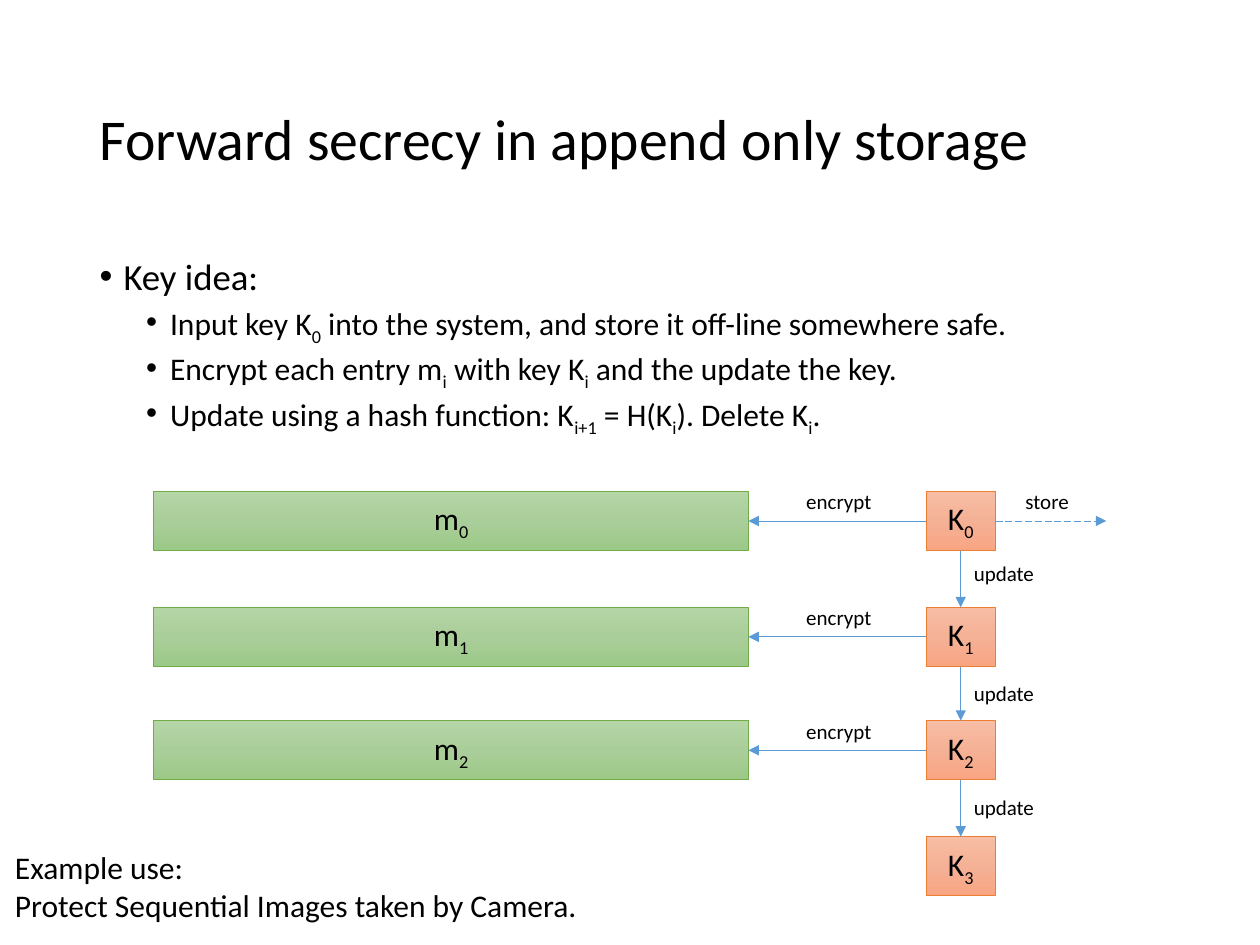
from copy import deepcopy

from lxml import etree
from pptx import Presentation
from pptx.dml.color import RGBColor
from pptx.enum.dml import MSO_LINE
from pptx.enum.shapes import MSO_CONNECTOR, MSO_SHAPE
from pptx.enum.text import MSO_ANCHOR, MSO_AUTO_SIZE, PP_ALIGN
from pptx.oxml.ns import qn
from pptx.util import Inches, Pt

LEFT, CENTER = PP_ALIGN.LEFT, PP_ALIGN.CENTER
TOP, MIDDLE = MSO_ANCHOR.TOP, MSO_ANCHOR.MIDDLE
NO_FIT, GROW = MSO_AUTO_SIZE.NONE, MSO_AUTO_SIZE.SHAPE_TO_FIT_TEXT
RECTANGLE, STRAIGHT = MSO_SHAPE.RECTANGLE, MSO_CONNECTOR.STRAIGHT
LONG_DASH = MSO_LINE.LONG_DASH

ARROW_BLUE = "5B9BD5"
GREEN = ("B5D5A7", "AACE9A", "9CC987", "70AD47")
ORANGE = ("F7BDA5", "F5B196", "F8A582", "ED7D31")

SIDE_BOTTOM, SIDE_LEFT, SIDE_RIGHT, SIDE_TOP = 2, 1, 3, 0


def rgb(value):
    return RGBColor.from_string(value)


def write(paragraph, text, size=18, align=LEFT, spacing=1.0, before=0):
    """Fill a paragraph; every second part between bars is a subscript."""
    paragraph.alignment = align
    paragraph.line_spacing = spacing
    paragraph.space_before = Pt(before)
    for index, part in enumerate(text.split("|")):
        if not part:
            continue
        run = paragraph.add_run()
        run.text = part
        run.font.name = "Calibri"
        run.font.size = Pt(size)
        run.font.color.rgb = rgb("000000")
        if index % 2:
            run.font._element.set("baseline", "-25000")


prs = Presentation()
prs.slide_width, prs.slide_height = Inches(10), Inches(7.5)
slide = prs.slides.add_slide(prs.slide_layouts[1])
shapes = slide.shapes

# Title and key idea
title, body = shapes.title, slide.placeholders[1]
for holder, top, height, anchor in ((title, 0.4, 1.45, MIDDLE), (body, 2, 4.76, TOP)):
    holder.left, holder.top = Inches(0.69), Inches(top)
    holder.width, holder.height = Inches(8.62), Inches(height)
    holder.text_frame.vertical_anchor = anchor
    holder.text_frame.auto_size = NO_FIT
write(title.text_frame.paragraphs[0], "Forward secrecy in append only storage",
      size=33, spacing=0.9)

ideas = [
    (0, "Key idea:"),
    (1, "Input key K|0| into the system, and store it off-line somewhere safe."),
    (1, "Encrypt each entry m|i| with key K|i| and the update the key."),
    (1, "Update using a hash function: K|i+1| = H(K|i|). Delete K|i|."),
]
for index, (level, idea) in enumerate(ideas):
    frame = body.text_frame
    paragraph = frame.add_paragraph() if index else frame.paragraphs[0]
    paragraph.level = level
    properties = paragraph._p.get_or_add_pPr()
    properties.set("marL", str(Inches((0.19, 0.56)[level])))
    properties.set("indent", str(Inches(-0.19)))
    etree.SubElement(properties, qn("a:buFont")).set("typeface", "Arial")
    etree.SubElement(properties, qn("a:buChar")).set("char", "•")
    write(paragraph, idea, size=(21, 18)[level], spacing=0.9, before=3.8 * level)

# Messages and the chain of keys
row_tops = (3.9, 4.82, 5.72, 6.64)
messages, keys = [], []
for row, top in enumerate(row_tops):
    cells = [(keys, "K", 7.35, 0.55, ORANGE)]
    if row < 3:
        cells.insert(0, (messages, "m", 1.22, 4.72, GREEN))
    for group, letter, left, width, (light, middle, dark, outline) in cells:
        cell = shapes.add_shape(RECTANGLE, Inches(left), Inches(top),
                                Inches(width), Inches(0.47))
        cell.shadow.inherit = False
        cell.fill.gradient()
        cell.fill.gradient_angle = 270
        stop_list = cell._element.spPr.find(qn("a:gradFill")).find(qn("a:gsLst"))
        stop_list.insert(1, deepcopy(stop_list[0]))
        stops = zip(cell.fill.gradient_stops, (0, 0.5, 1), (light, middle, dark))
        for stop, position, colour in stops:
            stop.position = position
            stop.color.rgb = rgb(colour)
        cell.line.color.rgb = rgb(outline)
        cell.line.width = Pt(0.5)
        cell.text_frame.vertical_anchor = MIDDLE
        write(cell.text_frame.paragraphs[0], f"{letter}|{row}|", align=CENTER)
        group.append(cell)

# Arrows: start cell and side, end cell and side
links = [(key, SIDE_LEFT, message, SIDE_RIGHT) for key, message in zip(keys, messages)]
links += [(key, SIDE_BOTTOM, following, SIDE_TOP)
          for key, following in zip(keys, keys[1:])]
links.append((keys[0], SIDE_RIGHT, None, None))
store_y = keys[0].top + keys[0].height // 2
for start, start_side, end, end_side in links:
    arrow = shapes.add_connector(STRAIGHT, Inches(7.9), store_y, Inches(8.78), store_y)
    arrow.begin_connect(start, start_side)
    if end is not None:
        arrow.end_connect(end, end_side)
    arrow.line.color.rgb = rgb(ARROW_BLUE)
    arrow.line.width = Pt(0.5)
    if end is None:
        arrow.line.dash_style = LONG_DASH
    etree.SubElement(arrow.line._get_or_add_ln(), qn("a:tailEnd")).set("type", "triangle")
    etree.SubElement(arrow._element.spPr, qn("a:effectLst"))

# Arrow labels and the example
notes = [(6.3, top - 0.07, 0.72, 0.3, 12, ["encrypt"]) for top in row_tops[:3]]
notes += [(7.63, top, 0.68, 0.3, 12, ["update"]) for top in (4.4, 5.35, 6.26)]
notes += [
    (8.04, 3.83, 0.55, 0.3, 12, ["store"]),
    (0.02, 6.68, 4.77, 0.71, 18,
     ["Example use:", "Protect Sequential Images taken by Camera."]),
]
for left, top, width, height, size, lines in notes:
    note = shapes.add_textbox(Inches(left), Inches(top), Inches(width), Inches(height))
    frame = note.text_frame
    frame.word_wrap = False
    frame.auto_size = GROW
    for index, line in enumerate(lines):
        write(frame.add_paragraph() if index else frame.paragraphs[0], line, size=size)

prs.save("out.pptx")
